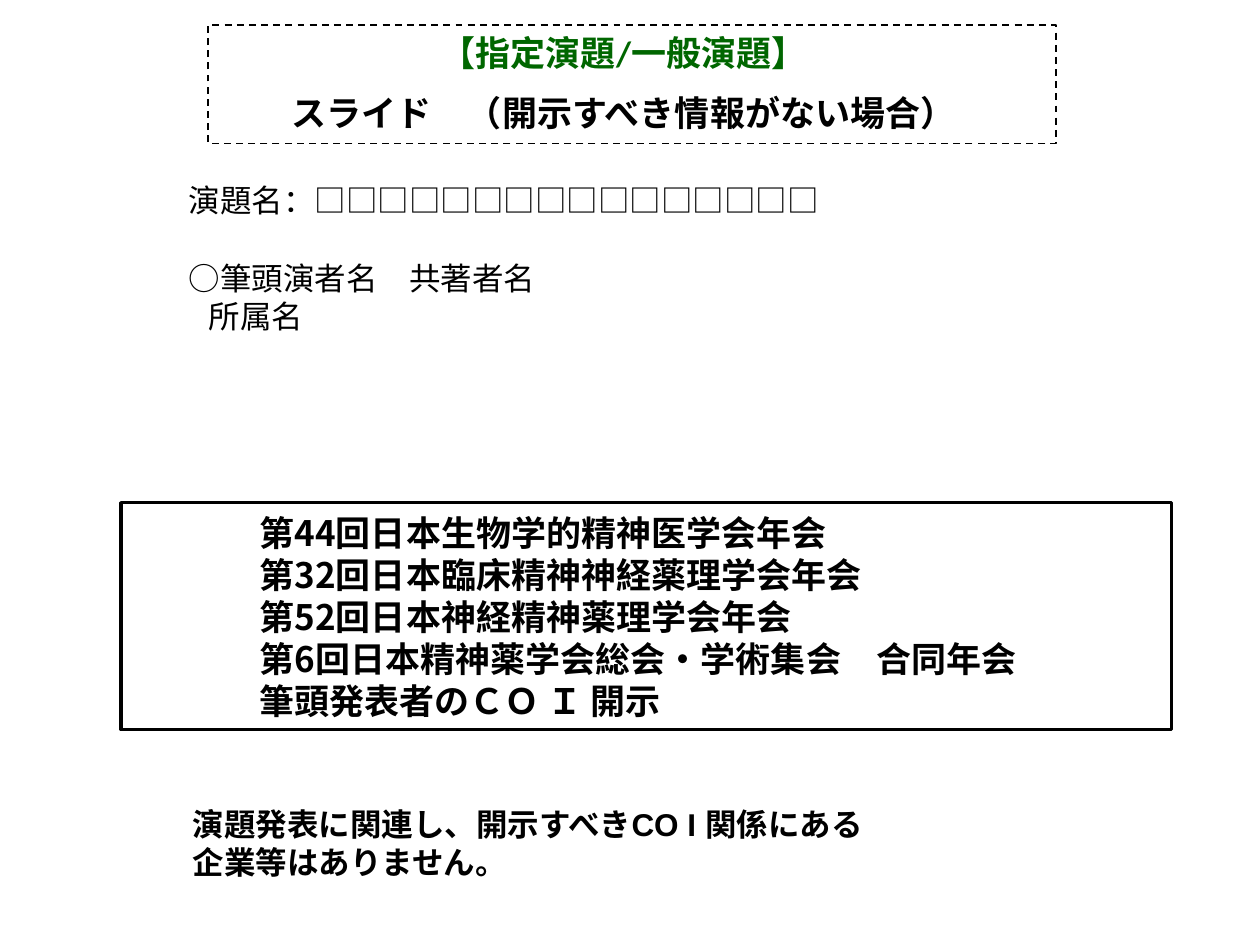
from lxml import etree
from pptx import Presentation, util as u
from pptx.dml.color import RGBColor
from pptx.enum import dml, shapes, text
from pptx.oxml.ns import qn

CJK = "Noto Sans CJK JP"
BLACK, WHITE, GREEN = "000000", "FFFFFF", "006600"


def tint(code):
    return RGBColor.from_string(code)


class Deck:
    """Holds the text style and the current slide; areas are percent shares."""

    base = {"size": u.Pt(20), "bold": True, "name": CJK}

    def __init__(self, wide, high):
        self.prs = Presentation()
        self.prs.slide_width, self.prs.slide_height = u.Inches(wide), u.Inches(high)
        self.slide = self.prs.slides.add_slide(self.prs.slide_layouts[5])

    def area(self, x, y, w, h):
        wide, high = self.prs.slide_width, self.prs.slide_height
        return [round(n * side / 100) for n, side in zip((x, y, w, h), (wide, high) * 2)]

    def title(self, area, lines):
        item = self.slide.shapes.title
        item.left, item.top, item.width, item.height = self.area(*area)
        self.edge(item, 1, dml.MSO_LINE.DASH)
        self.fill(item, lines, align=text.PP_ALIGN.CENTER)

    def box(self, area, lines, **opts):
        item = self.slide.shapes.add_shape(shapes.MSO_SHAPE.RECTANGLE, *self.area(*area))
        item.shadow.inherit = False
        item.fill.solid()
        item.fill.fore_color.rgb = tint(WHITE)
        self.edge(item, 2)
        self.fill(item, lines, anchor=text.MSO_ANCHOR.MIDDLE, **opts)

    def note(self, area, lines, **opts):
        self.fill(self.slide.shapes.add_textbox(*self.area(*area)), lines, **opts)

    def edge(self, item, width, dash=None):
        item.line.color.rgb = tint(BLACK)
        item.line.width = u.Pt(width)
        if dash:
            item.line.dash_style = dash

    def fill(self, item, lines, align=text.PP_ALIGN.LEFT, anchor=text.MSO_ANCHOR.TOP,
             left=0.1, top=0.05):
        """Write lines, each a pair of wording and its format values."""
        frame = item.text_frame
        form = {"word_wrap": True, "auto_size": text.MSO_AUTO_SIZE.NONE,
                "vertical_anchor": anchor, "margin_left": u.Inches(left),
                "margin_right": u.Inches(0.1), "margin_top": u.Inches(top),
                "margin_bottom": u.Inches(0.05)}
        for key, value in form.items():
            setattr(frame, key, value)
        for i, (words, look) in enumerate(lines):
            para = frame.paragraphs[0] if i == 0 else frame.add_paragraph()
            para.alignment = align
            look = self.base | look
            para.space_before = u.Pt(look.pop("gap", 0))
            for side in ("marL", "marR"):
                if side in look:
                    para._p.get_or_add_pPr().set(side, str(u.Inches(look.pop(side))))
            run = para.add_run()
            run.text = words
            run.font.color.rgb = tint(look.pop("color", BLACK))
            for key, value in look.items():
                setattr(run.font, key, value)
            east = etree.SubElement(run._r.get_or_add_rPr(), qn("a:ea"))
            east.set("typeface", CJK)

    def save(self):
        self.prs.save("out.pptx")


def main():
    deck = Deck(10, 7.5)
    head = {"name": "Calibri"}
    plain = {"name": "Arial", "size": u.Pt(18), "bold": False}
    strong = plain | {"bold": True}

    deck.title((16.5, 2.67, 67.3, 12.53), [
        ("【指定演題/一般演題】", head | {"color": GREEN, "marR": 0.13}),
        ("スライド\u3000（開示すべき情報がない場合）".replace("\u3000", "　"), head | {"gap": 10}),
    ])
    deck.box((9.6, 53.2, 83.4, 24), [
        ("第44回日本生物学的精神医学会年会", {}),
        ("第32回日本臨床精神神経薬理学会年会", {}),
        ("第52回日本神経精神薬理学会年会", {}),
        ("第6回日本精神薬学会総会・学術集会　合同年会", {}),
        ("筆頭発表者のＣＯ Ｉ 開示", head),
    ], left=1.1)
    deck.note((14, 18.53, 78.5, 28.27), [
        ("演題名：□□□□□□□□□□□□□□□□", plain),
        ("○筆頭演者名　共著者名", plain | {"gap": 23}),
        ("所属名", plain | {"marL": 0.16}),
    ])
    deck.note((11.8, 80.4, 81.4, 18.4), [
        ("演題発表に関連し、開示すべきCO I 関係にある", strong),
        ("企業等はありません。", strong),
    ], left=0.35, top=0.36)
    deck.save()


if __name__ == "__main__":
    main()
